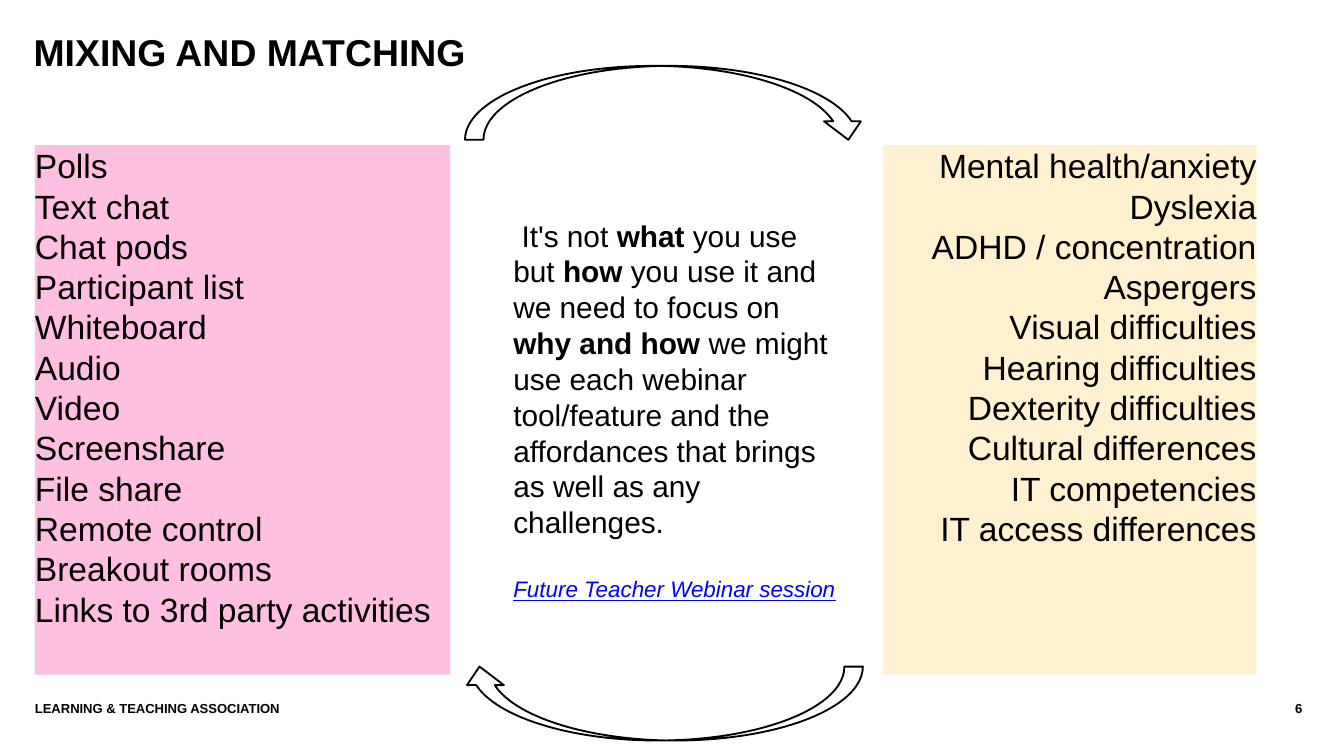
import pptx
import pptx.util
import pptx.dml.color
import pptx.enum.shapes
import pptx.enum.text
from pptx.util import Inches

ALIGN = pptx.enum.text.PP_ALIGN
ANCHOR = pptx.enum.text.MSO_ANCHOR
SHAPE = pptx.enum.shapes.MSO_SHAPE

TOOLS = [
    "Polls", "Text chat", "Chat pods", "Participant list", "Whiteboard",
    "Audio", "Video", "Screenshare", "File share", "Remote control",
    "Breakout rooms", "Links to 3rd party activities",
]
NEEDS = [
    "Mental health/anxiety", "Dyslexia", "ADHD / concentration", "Aspergers",
    "Visual difficulties", "Hearing difficulties", "Dexterity difficulties",
    "Cultural differences", "IT competencies", "IT access differences",
]
MESSAGE = (
    " It's not *what* you use but *how* you use it and we need to focus on "
    "*why and how *we might use each webinar tool/feature and the "
    "affordances that brings as well as any challenges."
)


def color(value):
    return pptx.dml.color.RGBColor.from_string(value)


def place(s, x, y, w, h):
    s.left, s.top, s.width, s.height = (Inches(v) for v in (x, y, w, h))


def prepare(tf, anchor=ANCHOR.TOP):
    tf.word_wrap = True
    tf.auto_size = pptx.enum.text.MSO_AUTO_SIZE.NONE
    tf.margin_left = tf.margin_right = tf.margin_top = tf.margin_bottom = 0
    tf.vertical_anchor = anchor


def write(p, text, size=18, bold=False, italic=False, underline=False,
          fill="000000", align=ALIGN.LEFT, spacing=1.2, before=0):
    p.alignment = align
    p.line_spacing = pptx.util.Pt(size * spacing)
    p.space_before = pptx.util.Pt(before)
    for i, part in enumerate(text.split("*")):
        r = p.add_run()
        r.text = part
        r.font.name = "Arial"
        r.font.size = pptx.util.Pt(size)
        r.font.bold = bold or i % 2 == 1
        r.font.italic = italic
        r.font.underline = underline
        r.font.color.rgb = color(fill)


def add_text(slide, box, anchor=ANCHOR.TOP):
    s = slide.shapes.add_textbox(*(Inches(v) for v in box))
    prepare(s.text_frame, anchor)
    return s.text_frame


def add_panel(slide, box, fill, items, align):
    s = slide.shapes.add_shape(SHAPE.RECTANGLE, *(Inches(v) for v in box))
    s.shadow.inherit = False
    s.fill.solid()
    s.fill.fore_color.rgb = color(fill)
    s.line.fill.background()
    tf = s.text_frame
    prepare(tf)
    for i, item in enumerate(items):
        p = tf.add_paragraph() if i else tf.paragraphs[0]
        write(p, item, align=align)


def add_arrow(slide, x, y, rotation=0):
    s = slide.shapes.add_shape(SHAPE.CURVED_DOWN_ARROW, Inches(x), Inches(y),
                               Inches(2.99), Inches(0.55))
    s.shadow.inherit = False
    s.fill.background()
    s.line.color.rgb = color("000000")
    s.line.width = pptx.util.Pt(1)
    s.rotation = rotation


def main():
    prs = pptx.Presentation()
    prs.slide_width = Inches(10)
    prs.slide_height = prs.slide_width * 9 // 16
    slide = prs.slides.add_slide(prs.slide_layouts[5])

    title = slide.shapes.title
    place(title, 0.25, 0.27, 9.23, 0.76)
    prepare(title.text_frame)
    write(title.text_frame.paragraphs[0], "MIXING AND MATCHING",
          size=20, bold=True, spacing=1)

    add_panel(slide, (0.26, 1.08, 3.09, 3.94), "FFBFE1", TOOLS, ALIGN.LEFT)
    add_panel(slide, (6.57, 1.08, 2.78, 3.94), "FFF1D0", NEEDS, ALIGN.RIGHT)

    tf = add_text(slide, (3.82, 1.08, 2.44, 3.94), ANCHOR.MIDDLE)
    write(tf.paragraphs[0], MESSAGE, size=16)
    write(tf.add_paragraph(), "Future Teacher Webinar session", size=12,
          italic=True, underline=True, fill="0000FF", before=19.2)

    add_arrow(slide, 3.46, 0.49)
    add_arrow(slide, 3.43, 4.96, rotation=180)

    tf = add_text(slide, (0.26, 5.21, 8.41, 0.3))
    write(tf.paragraphs[0], "LEARNING & TEACHING ASSOCIATION", size=7, bold=True)
    tf = add_text(slide, (8.7, 5.21, 0.99, 0.3))
    write(tf.paragraphs[0], "6", size=7, bold=True, align=ALIGN.RIGHT)

    prs.save("out.pptx")


if __name__ == "__main__":
    main()
